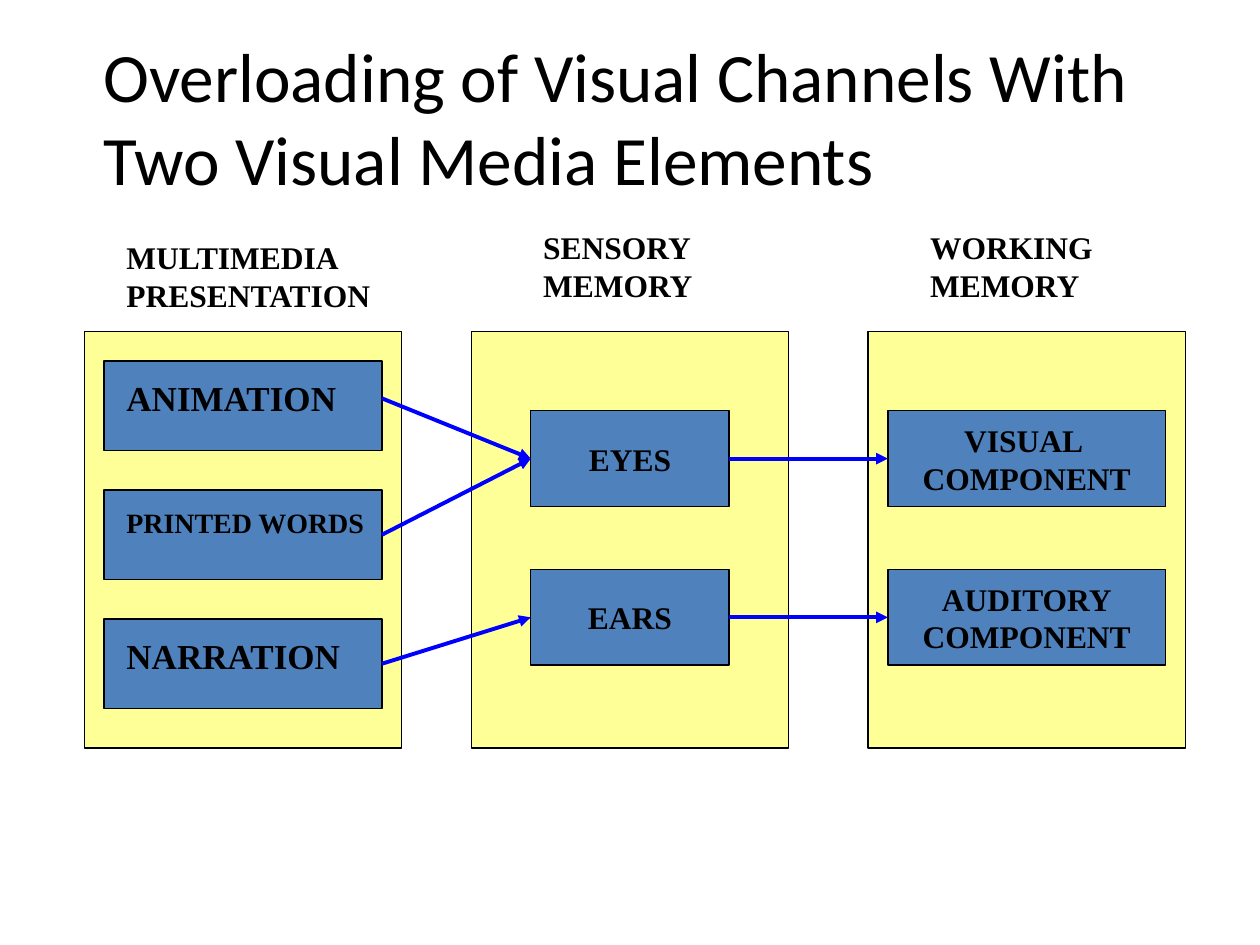
from dataclasses import dataclass

from lxml import etree
from pptx import Presentation
from pptx import util as u
from pptx.dml.color import RGBColor
from pptx.enum import shapes, text
from pptx.oxml import ns


@dataclass(frozen=True)
class Theme:
    ink: str = "000000"
    panel: str = "FFFF97"
    box: str = "4F81BD"
    arrow: str = "0000FF"
    title_font: str = "Calibri"
    body_font: str = "Times New Roman"
    title_size: float = 39.6
    large: float = 20
    body: float = 18
    small: float = 16
    outline: float = 0.75
    arrow_width: float = 2.25


class Diagram:
    """Holds the theme and the current slide; lengths are centimetres."""

    def __init__(self, slide, theme):
        self.slide = slide
        self.theme = theme

    def style(self, frame, size, font=None, bold=True, align=text.PP_ALIGN.LEFT):
        for paragraph in frame.paragraphs:
            paragraph.alignment = align
            for run in paragraph.runs:
                run.font.name = font or self.theme.body_font
                run.font.size = u.Pt(size)
                run.font.bold = bold
                run.font.color.rgb = RGBColor.from_string(self.theme.ink)

    def title(self, words, left, top, width, height):
        title = self.slide.shapes.title
        title.left, title.top = u.Cm(left), u.Cm(top)
        title.width, title.height = u.Cm(width), u.Cm(height)
        frame = title.text_frame
        frame.text = words
        frame.auto_size = text.MSO_AUTO_SIZE.NONE
        frame.vertical_anchor = text.MSO_ANCHOR.MIDDLE
        self.style(frame, self.theme.title_size, self.theme.title_font, bold=False)

    def rectangle(self, left, top, width, height, fill, words="", parent=None):
        rect = (parent or self.slide).shapes.add_shape(
            shapes.MSO_SHAPE.RECTANGLE,
            u.Cm(left), u.Cm(top), u.Cm(width), u.Cm(height))
        rect.shadow.inherit = False
        rect.fill.solid()
        rect.fill.fore_color.rgb = RGBColor.from_string(fill)
        rect.line.color.rgb = RGBColor.from_string(self.theme.ink)
        rect.line.width = u.Pt(self.theme.outline)
        if words:
            frame = rect.text_frame
            frame.text = words
            frame.word_wrap = False
            frame.vertical_anchor = text.MSO_ANCHOR.MIDDLE
            self.style(frame, self.theme.body, align=text.PP_ALIGN.CENTER)
        return rect

    def label(self, words, left, top, width, height, size, parent=None):
        label = (parent or self.slide).shapes.add_textbox(
            u.Cm(left), u.Cm(top), u.Cm(width), u.Cm(height))
        frame = label.text_frame
        frame.text = words
        frame.word_wrap = True
        self.style(frame, size)

    def media_box(self, words, left, top, width, height, size):
        """A box grouped with the label that lies on it."""
        group = self.slide.shapes.add_group_shape()
        box = self.rectangle(left, top, width, height, self.theme.box, parent=group)
        self.label(words, left + 0.2, top + 0.18, width - 0.2, 1.0, size, group)
        return box

    def arrow(self, source, target, start_y=None):
        """Runs from right side to left side; start_y overrides the middle."""
        x = source.left + source.width
        y = u.Cm(start_y) if start_y else source.top + source.height // 2
        arrow = self.slide.shapes.add_connector(
            shapes.MSO_CONNECTOR.STRAIGHT, x, y,
            target.left, target.top + target.height // 2)
        if start_y is None:
            arrow.begin_connect(source, 3)
        arrow.end_connect(target, 1)
        arrow.line.color.rgb = RGBColor.from_string(self.theme.arrow)
        arrow.line.width = u.Pt(self.theme.arrow_width)
        etree.SubElement(arrow.line._get_or_add_ln(), ns.qn("a:tailEnd"), type="triangle")
        etree.SubElement(arrow._element.spPr, ns.qn("a:effectLst"))


def main():
    deck = Presentation()
    deck.slide_width, deck.slide_height = u.Cm(25.4), u.Cm(19.05)
    theme = Theme()
    diagram = Diagram(deck.slides.add_slide(deck.slide_layouts[5]), theme)

    diagram.title("Overloading of Visual Channels With Two Visual Media Elements",
                  1.83, 0.76, 22.05, 3.18)

    # Three stages: panel left, heading and its place
    stages = [
        (1.7, "MULTIMEDIA PRESENTATION", 2.3, 4.67, 5.8),
        (9.5, "SENSORY MEMORY", 10.7, 4.47, 4.0),
        (17.5, "WORKING\vMEMORY", 18.5, 4.47, 4.0),
    ]
    for panel_left, heading, left, top, width in stages:
        diagram.rectangle(panel_left, 6.68, 6.4, 8.4, theme.panel)
        diagram.label(heading, left, top, width, 1.78, theme.body)

    # Media elements
    media = [("ANIMATION", theme.large), ("PRINTED WORDS", theme.small),
             ("NARRATION", theme.large)]
    animation, printed_words, narration = [
        diagram.media_box(words, 2.1, 7.28 + 2.6 * row, 5.6, 1.8, size)
        for row, (words, size) in enumerate(media)]

    # Senses and the memory components they feed
    channels = [("EYES", "VISUAL \nCOMPONENT"), ("EARS", "AUDITORY\nCOMPONENT")]
    senses = []
    for row, (sense_words, component_words) in enumerate(channels):
        top = 8.28 + 3.2 * row
        sense = diagram.rectangle(10.7, top, 4.0, 1.93, theme.box, sense_words)
        component = diagram.rectangle(17.9, top, 5.6, 1.93, theme.box, component_words)
        diagram.arrow(sense, component)
        senses.append(sense)

    # Media to senses
    eyes, ears = senses
    diagram.arrow(animation, eyes, start_y=8.03)
    diagram.arrow(printed_words, eyes)
    diagram.arrow(narration, ears)

    deck.save("out.pptx")


if __name__ == "__main__":
    main()
